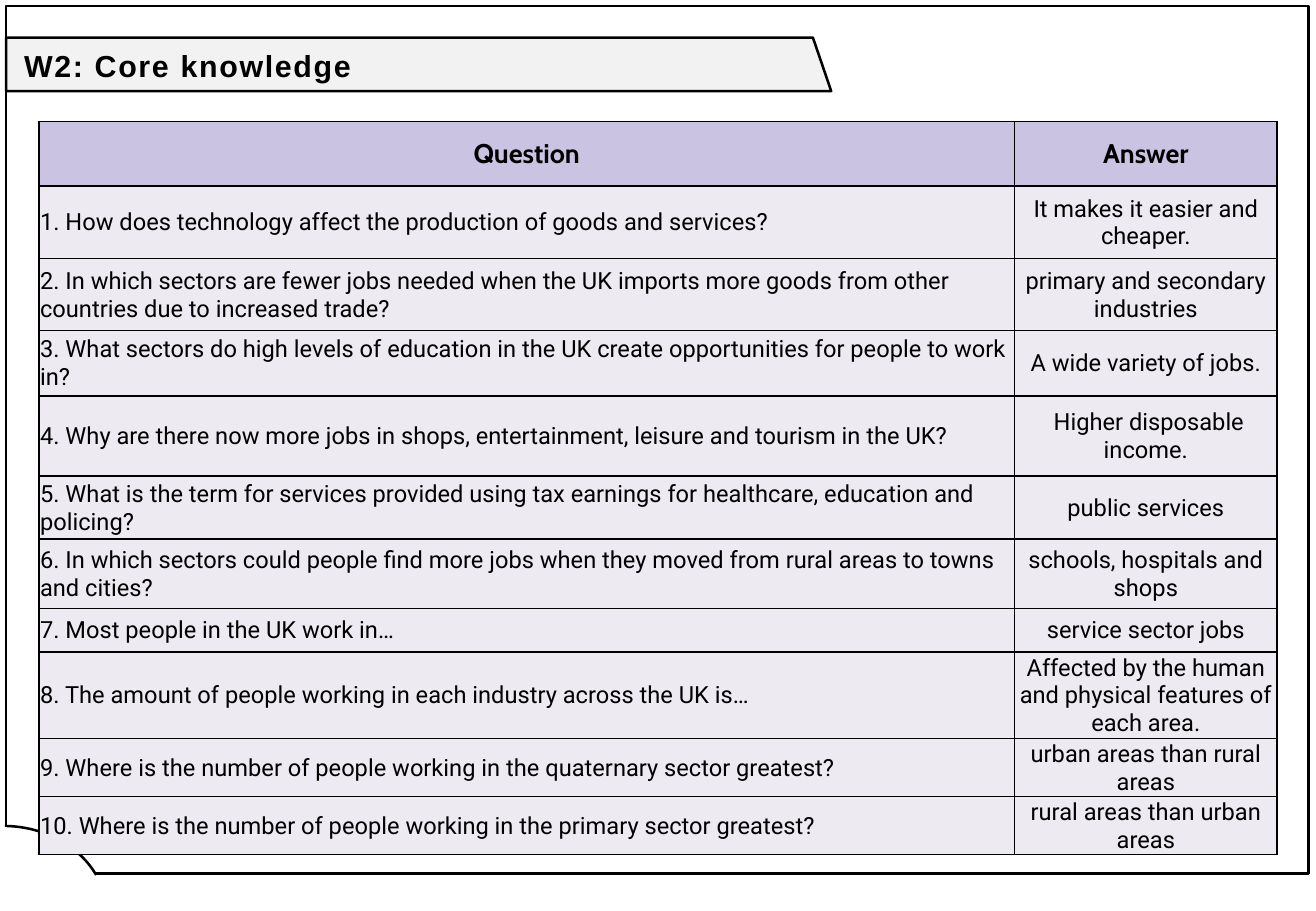
from typing import NamedTuple

from lxml.etree import SubElement
from pptx import Presentation
from pptx.dml.color import RGBColor
from pptx.enum.shapes import MSO_SHAPE
from pptx.enum.text import MSO_ANCHOR, PP_ALIGN
from pptx.oxml.ns import qn
from pptx.util import Inches, Pt

COLORS = {
    "ink": "000000",
    "paper": "FFFFFF",
    "banner": "F2F2F2",
    "header": "CAC4E2",
    "body": "EDEAF1",
}


class Outline(NamedTuple):
    kind: MSO_SHAPE
    left: float
    top: float
    width: float
    height: float
    fill: str | None
    line: str | None
    adjustments: tuple[float, ...] = ()


class Row(NamedTuple):
    height: float
    question: str
    answer: str


class CellStyle(NamedTuple):
    fill: str
    font: str
    size: int
    bold: bool


BANNER = [(0.05, 0.31), (6.69, 0.31), (6.84, 0.75), (0.05, 0.75)]
OUTLINES = [
    Outline(MSO_SHAPE.RECTANGLE, 0.05, 0.05, 10.72, 7.14, None, "ink"),
    Outline(MSO_SHAPE.ARC, -0.82, 6.8, 1.7, 1.45, "paper", "ink", (162.525, 202.265)),
    Outline(MSO_SHAPE.RECTANGLE, 0.01, 6.81, 0.05, 0.1, "paper", None),
]
HEADER_STYLE = CellStyle("header", "Cabin", 16, True)
BODY_STYLE = CellStyle("body", "Roboto", 14, False)
COLUMNS = [8.03, 2.16]
ROWS = [
    Row(0.53, "Question", "Answer"),
    Row(0.6, "1. How does technology affect the production of goods and services?",
        "It makes it easier and cheaper."),
    Row(0.59, "2. In which sectors are fewer jobs needed when the UK imports more goods "
        "from other countries due to increased trade?", "primary and secondary industries"),
    Row(0.54, "3. What sectors do high levels of education in the UK create opportunities "
        "for people to work in?", "A wide variety of jobs."),
    Row(0.66, "4. Why are there now more jobs in shops, entertainment, leisure and tourism "
        "in the UK?", " Higher disposable income."),
    Row(0.52, "5. What is the term for services provided using tax earnings for healthcare, "
        "education and policing?", "public services"),
    Row(0.57, "6. In which sectors could people find more jobs when they moved from rural "
        "areas to towns and cities?", "schools, hospitals and shops"),
    Row(0.36, "7. Most people in the UK work in…", "service sector jobs"),
    Row(0.52, "8. The amount of people working in each industry across the UK is…",
        "Affected by the human and physical features of each area."),
    Row(0.38, "9. Where is the number of people working in the quaternary sector greatest?",
        "urban areas than rural areas"),
    Row(0.36, "10. Where is the number of people working in the primary sector greatest?",
        "rural areas than urban areas"),
]


def rgb(name: str) -> RGBColor:
    return RGBColor.from_string(COLORS[name])


def paint(sp, fill: str | None, line: str | None) -> None:
    sp.shadow.inherit = False
    if fill:
        sp.fill.solid()
        sp.fill.fore_color.rgb = rgb(fill)
    else:
        sp.fill.background()
    if line:
        sp.line.color.rgb = rgb(line)
        sp.line.width = Pt(1.5)
    else:
        sp.line.fill.background()


def add_run(p, text: str, font: str, size: int, bold: bool):
    r = p.add_run()
    r.text = text
    r.font.name = font
    r.font.size = Pt(size)
    r.font.bold = bold
    r.font.color.rgb = rgb("ink")
    return r


def add_banner(s) -> None:
    start, *rest = [(Inches(x), Inches(y)) for x, y in BANNER]
    builder = s.shapes.build_freeform(*start)
    builder.add_line_segments(rest, close=True)
    paint(builder.convert_to_shape(), "banner", "ink")


def add_outline(s, item: Outline) -> None:
    sp = s.shapes.add_shape(item.kind, Inches(item.left), Inches(item.top),
                            Inches(item.width), Inches(item.height))
    for i, value in enumerate(item.adjustments):
        sp.adjustments[i] = value
    paint(sp, item.fill, item.line)


def add_title(s) -> None:
    tf = s.shapes.add_textbox(Inches(0.1), Inches(0.21), Inches(6.43), Inches(0.63)).text_frame
    tf.word_wrap = True
    tf.vertical_anchor = MSO_ANCHOR.MIDDLE
    p = tf.paragraphs[0]
    p.line_spacing = 1.07
    p.space_after = Pt(8)
    r = add_run(p, "W2: Core knowledge", "Arial", 18, True)
    r.font._element.set("spc", "100")


def add_borders(cell) -> None:
    tc_pr = cell._tc.get_or_add_tcPr()
    for side in ("a:lnL", "a:lnR", "a:lnT", "a:lnB"):
        ln = SubElement(tc_pr, qn(side), w=str(Pt(1)))
        SubElement(SubElement(ln, qn("a:solidFill")), qn("a:srgbClr"), val=COLORS["ink"])


def fill_cell(cell, text: str, style: CellStyle, align: PP_ALIGN) -> None:
    add_borders(cell)
    cell.fill.solid()
    cell.fill.fore_color.rgb = rgb(style.fill)
    cell.margin_left = cell.margin_right = cell.margin_top = Inches(0.01)
    cell.margin_bottom = 0
    cell.vertical_anchor = MSO_ANCHOR.MIDDLE
    p = cell.text_frame.paragraphs[0]
    p.alignment = align
    add_run(p, text, style.font, style.size, style.bold)


def add_questions(s) -> None:
    table = s.shapes.add_table(
        len(ROWS), len(COLUMNS), Inches(0.32), Inches(1),
        Inches(sum(COLUMNS)), Inches(sum(row.height for row in ROWS))).table
    for column, width in zip(table.columns, COLUMNS):
        column.width = Inches(width)
    for i, row in enumerate(ROWS):
        table.rows[i].height = Inches(row.height)
        style = BODY_STYLE if i else HEADER_STYLE
        align = PP_ALIGN.LEFT if i else PP_ALIGN.CENTER
        fill_cell(table.cell(i, 0), row.question, style, align)
        fill_cell(table.cell(i, 1), row.answer, style, PP_ALIGN.CENTER)


def main() -> None:
    prs = Presentation()
    prs.slide_width = Inches(10.83)
    prs.slide_height = Inches(7.5)
    s = prs.slides.add_slide(prs.slide_layouts[6])
    add_banner(s)
    for item in OUTLINES:
        add_outline(s, item)
    add_title(s)
    add_questions(s)
    prs.save("out.pptx")


if __name__ == "__main__":
    main()
